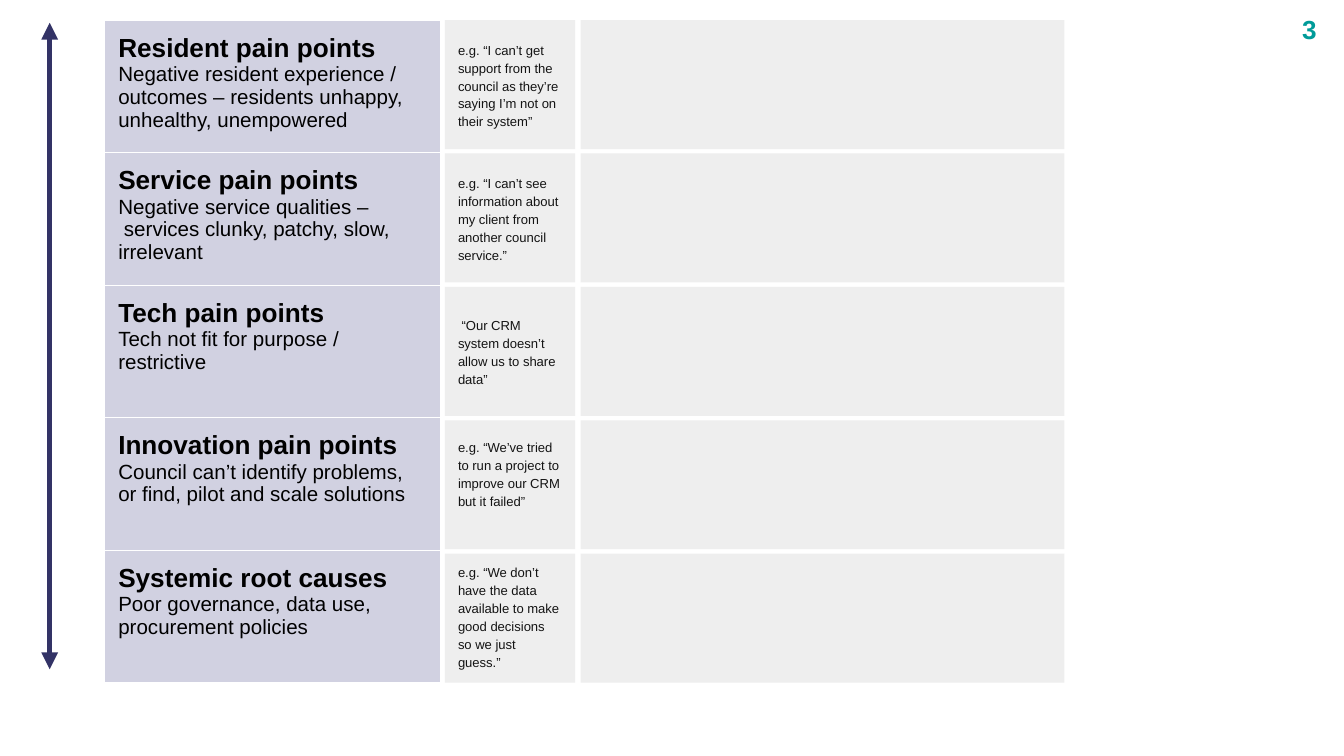
from lxml import etree
from pptx import Presentation
from pptx import util as u
from pptx.dml.color import RGBColor
from pptx.enum import shapes, text
from pptx.oxml import ns

NAVY = RGBColor(0x33, 0x33, 0x66)
LILAC = RGBColor(0xD1, 0xD1, 0xE1)
GREY = RGBColor(0xEE, 0xEE, 0xEE)
TEAL = RGBColor(0x00, 0x9B, 0x99)
INK = RGBColor(0x14, 0x14, 0x14)
BLACK = RGBColor(0, 0, 0)
WIDE = 10
HIGH = WIDE * 9 / 16
TOP = 0.15
PAD = u.Inches(0.1)
HARD = chr(160)

LEVELS = [
    ("Resident pain points",
     f"Negative resident experience / outcomes –{HARD}residents unhappy, unhealthy, unempowered",
     "e.g. “I can’t get support from the council as they’re saying I’m not on their system”", 0.1),
    ("Service pain points",
     f"Negative service qualities –{HARD}services clunky, patchy, slow, irrelevant",
     "e.g. “I can’t see information about my client from another council service.”", 0.1),
    ("Tech pain points",
     "Tech not fit for purpose / restrictive",
     " “Our CRM system doesn’t allow us to share data”", 0.1),
    ("Innovation pain points",
     "Council can’t identify problems, or find, pilot and scale solutions",
     "e.g. “We’ve tried to run a project to improve our CRM but it failed”", 0.28),
    ("Systemic root causes",
     "Poor governance, data use, procurement policies",
     "e.g. “We don’t have the data available to make good decisions so we just guess.”", 0.13),
]


def inches(*sizes):
    """Turn numbers into lengths in inches."""
    return [u.Inches(size) for size in sizes]


def style(font, size, color, bold=False):
    """Set the face, size, colour and weight of a font."""
    font.name, font.size, font.bold = "Arial", u.Pt(size), bold
    font.color.rgb = color


def pad(item):
    """Give a cell or text frame equal margins."""
    item.margin_left = item.margin_right = PAD
    item.margin_top = item.margin_bottom = PAD


def edge(cell):
    """Draw thin white borders around a cell."""
    props = cell._tc.get_or_add_tcPr()
    for side in ("lnL", "lnR", "lnT", "lnB"):
        line = etree.SubElement(props, ns.qn(f"a:{side}"), w=str(u.Pt(0.75)))
        fill = etree.SubElement(line, ns.qn("a:solidFill"))
        etree.SubElement(fill, ns.qn("a:srgbClr"), val="FFFFFF")


def levels(slide, left, top, width, height):
    """Place the table that names each level."""
    count = len(LEVELS)
    table = slide.shapes.add_table(count, 1, *inches(left, top, width, height)).table
    table.first_row = table.horz_banding = False
    for index, (title, detail, _, _) in enumerate(LEVELS):
        cell = table.cell(index, 0)
        edge(cell)
        cell.fill.solid()
        cell.fill.fore_color.rgb = LILAC
        pad(cell)
        para = cell.text_frame.paragraphs[0]
        head = para.add_run()
        head.text = title
        style(head.font, 14, BLACK, True)
        para.add_line_break()
        body = para.add_run()
        body.text = detail
        style(body.font, 11, BLACK)


def panel(slide, left, top, width, height):
    """Place one plain grey box."""
    box = slide.shapes.add_shape(shapes.MSO_SHAPE.RECTANGLE, *inches(left, top, width, height))
    box.shadow.inherit = False
    box.fill.solid()
    box.fill.fore_color.rgb = GREY
    box.line.fill.background()
    return box


def quotes(slide, left, top, width, height):
    """Place an example and an empty panel beside each level."""
    small, gap, tall = 0.97, 0.04, 0.96
    step = (height - tall) / (len(LEVELS) - 1)
    for index, (_, _, quote, low) in enumerate(LEVELS):
        y = top + index * step
        frame = panel(slide, left, y, small, tall).text_frame
        panel(slide, left + small + gap, y, width - small - gap, tall)
        frame.word_wrap = True
        frame.vertical_anchor = text.MSO_ANCHOR.MIDDLE
        pad(frame)
        frame.margin_bottom = u.Inches(low)
        para = frame.paragraphs[0]
        para.text = quote
        para.alignment = text.PP_ALIGN.LEFT
        para.line_spacing = 1.15
        style(para.font, 7, INK)


def arrow(slide, x, top, end):
    """Draw the double-headed vertical arrow."""
    line = slide.shapes.add_connector(shapes.MSO_CONNECTOR.STRAIGHT, *inches(x, top, x, end))
    line.line.color.rgb = NAVY
    line.line.width = u.Pt(3)
    stroke = line.line._get_or_add_ln()
    for tip in ("headEnd", "tailEnd"):
        etree.SubElement(stroke, ns.qn(f"a:{tip}"), type="triangle")
    etree.SubElement(line._element.spPr, ns.qn("a:effectLst"))


def number(slide, left, top, width, height):
    """Place the page number."""
    frame = slide.shapes.add_textbox(*inches(left, top, width, height)).text_frame
    frame.word_wrap = True
    frame.vertical_anchor = text.MSO_ANCHOR.MIDDLE
    pad(frame)
    para = frame.paragraphs[0]
    para.text = "3"
    style(para.font, 14, TEAL, True)


def main():
    """Build and save the slide."""
    deck = Presentation()
    deck.slide_width, deck.slide_height = inches(WIDE, HIGH)
    slide = deck.slides.add_slide(deck.slide_layouts[6])
    number(slide, 9.59, 0, 0.6, 0.43)
    levels(slide, 0.78, TOP, 2.5, 4.93)
    arrow(slide, 0.37, 0.17, 4.98)
    quotes(slide, 3.31, TOP, 4.61, 4.93)
    deck.save("out.pptx")


if __name__ == "__main__":
    main()
